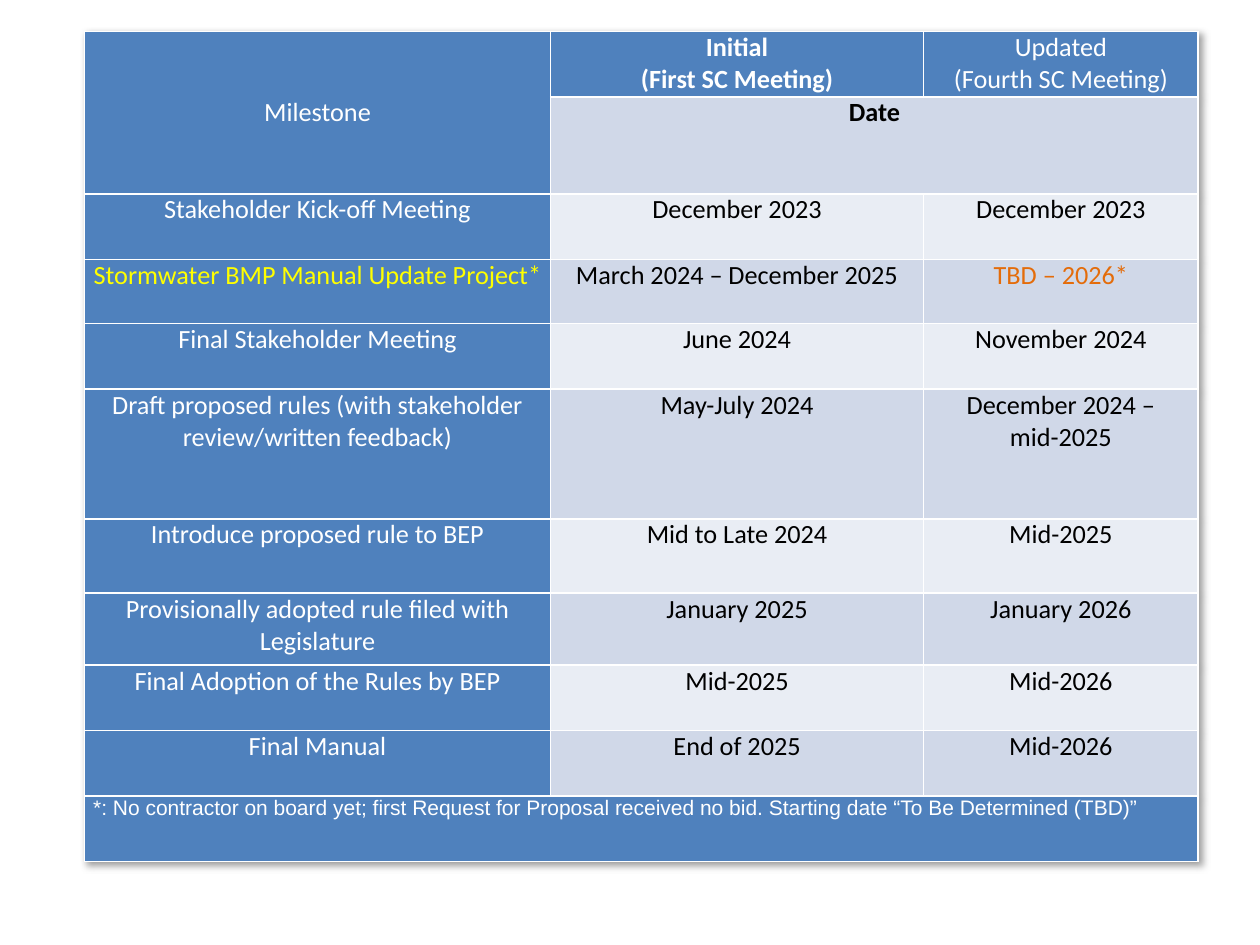
from dataclasses import dataclass

from lxml import etree
from pptx import Presentation
from pptx.dml.color import RGBColor
from pptx.enum import text
from pptx.oxml import ns, parse_xml
from pptx.util import Inches, Pt


@dataclass(frozen=True)
class Theme:
    header: str = "4F81BD"
    bands: tuple = ("D0D8E8", "E9EDF4")
    light: str = "FFFFFF"
    dark: str = "000000"
    changed: str = "FFFF00"
    pending: str = "E46C0A"
    font: str = "Calibri"
    note_font: str = "Arial"
    size: int = 15
    note_size: int = 12


THEME = Theme()
COLUMN_WIDTHS = (3.7, 2.96, 2.18)
ROW_HEIGHTS = (0.52, 0.77, 0.52, 0.51, 0.52, 1.03, 0.59, 0.57, 0.52, 0.52, 0.52)
ROWS = (
    ("Milestone", "Initial\n(First SC Meeting)", "Updated\n(Fourth SC Meeting)"),
    ("", "Date", ""),
    ("Stakeholder Kick-off Meeting", "December 2023", "December 2023"),
    ("Stormwater BMP Manual Update Project*", "March 2024 – December 2025", "TBD – 2026*"),
    ("Final Stakeholder Meeting", "June 2024", "November 2024"),
    ("Draft proposed rules (with stakeholder review/written feedback)",
     "May-July 2024", "December 2024 –\nmid-2025"),
    ("Introduce proposed rule to BEP", "Mid to Late 2024", "Mid-2025"),
    ("Provisionally adopted rule filed with Legislature", "January 2025", "January 2026"),
    ("Final Adoption of the Rules by BEP", "Mid-2025", "Mid-2026"),
    ("Final Manual", "End of 2025", "Mid-2026"),
    ("*: No contractor on board yet; first Request for Proposal received no bid. "
     "Starting date “To Be Determined (TBD)”", "", ""),
)
NOTE_ROW = len(ROWS) - 1
BOLD_CELLS = {(0, 1), (1, 1)}
ACCENTS = {(3, 0): THEME.changed, (3, 2): THEME.pending}


def add_borders(cell, color, width=1):
    properties = cell._tc.get_or_add_tcPr()
    for side in ("lnL", "lnR", "lnT", "lnB"):
        line = etree.SubElement(properties, ns.qn(f"a:{side}"), w=str(Pt(width)))
        fill = etree.SubElement(line, ns.qn("a:solidFill"))
        etree.SubElement(fill, ns.qn("a:srgbClr"), val=color)


def add_shadow(table):
    table._tbl.tblPr.insert(0, parse_xml(
        f'<a:effectLst {ns.nsdecls("a")}>'
        '<a:outerShdw blurRad="50800" dist="38100" dir="2700000" algn="tl">'
        '<a:srgbClr val="000000"><a:alpha val="40000"/></a:srgbClr>'
        '</a:outerShdw></a:effectLst>'))


def format_cell(cell, row, column):
    on_header = row in (0, NOTE_ROW) or column == 0
    fill = THEME.header if on_header else THEME.bands[(row + 1) % 2]
    color = ACCENTS.get((row, column), THEME.light if on_header else THEME.dark)
    add_borders(cell, THEME.light)
    cell.fill.solid()
    cell.fill.fore_color.rgb = RGBColor.from_string(fill)
    cell.margin_left = cell.margin_right = Inches(0.07)
    cell.margin_top = cell.margin_bottom = 0
    if cell.is_spanned:
        return
    is_note = row == NOTE_ROW
    cell.text_frame.text = ROWS[row][column]
    for paragraph in cell.text_frame.paragraphs:
        paragraph.alignment = text.PP_ALIGN.LEFT if is_note else text.PP_ALIGN.CENTER
        font = paragraph.font
        font.name = THEME.note_font if is_note else THEME.font
        font.size = Pt(THEME.note_size if is_note else THEME.size)
        font.bold = (row, column) in BOLD_CELLS
        font.color.rgb = RGBColor.from_string(color)


def add_schedule(slide):
    table = slide.shapes.add_table(
        len(ROWS), len(COLUMN_WIDTHS), Inches(0.67), Inches(0.25),
        Inches(sum(COLUMN_WIDTHS)), Inches(sum(ROW_HEIGHTS))).table
    for column, width in zip(table.columns, COLUMN_WIDTHS):
        column.width = Inches(width)
    for row, height in zip(table.rows, ROW_HEIGHTS):
        row.height = Inches(height)

    table.cell(0, 0).merge(table.cell(1, 0))
    table.cell(1, 1).merge(table.cell(1, 2))
    table.cell(NOTE_ROW, 0).merge(table.cell(NOTE_ROW, 2))
    for row in range(len(ROWS)):
        for column in range(len(COLUMN_WIDTHS)):
            format_cell(table.cell(row, column), row, column)
    table.cell(0, 0).vertical_anchor = text.MSO_ANCHOR.MIDDLE
    add_shadow(table)


def main():
    presentation = Presentation()
    presentation.slide_width = Inches(10)
    presentation.slide_height = Inches(7.5)
    slide = presentation.slides.add_slide(presentation.slide_layouts[6])
    add_schedule(slide)
    presentation.save("out.pptx")


if __name__ == "__main__":
    main()
